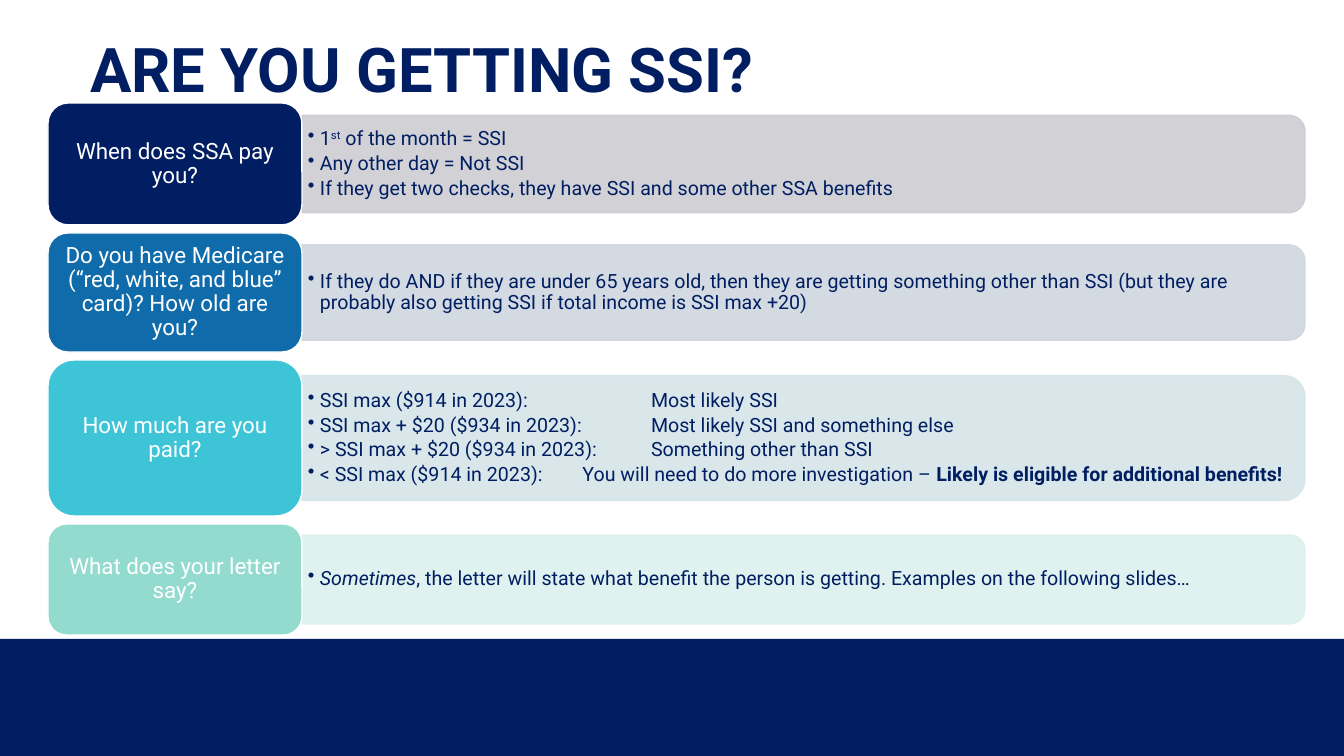
import pptx
import pptx.dml.color
import pptx.enum.shapes
import pptx.enum.text
import pptx.oxml.ns
import pptx.util
from lxml import etree

PX = 914400 / 100.8
FONT = "Roboto"
NAVY = "001E61"
WHITE = "FFFFFF"
SHAPE = pptx.enum.shapes.MSO_SHAPE
MIDDLE = pptx.enum.text.MSO_ANCHOR.MIDDLE
CENTER = pptx.enum.text.PP_ALIGN.CENTER

TAB_LEFT, TAB_WIDTH = 48, 254
PANEL_LEFT, PANEL_WIDTH = 302, 1003
ROWS_TOP, ROW_GAP = 103, 8
PANEL_SHARE = 0.8

ROWS = [
    (122, NAVY, "CCCDD2", "When does SSA pay you?", [
        [("1", ""), ("st", "super"), (" of the month = SSI", "")],
        [("Any other day = Not SSI", "")],
        [("If they get two checks, they have SSI and some other SSA benefits", "")],
    ]),
    (119, "106BAA", "D0D6DF",
     "Do you have Medicare (“red, white, and blue” card)? How old are you?", [
        [("If they do AND if they are under 65 years old, then they are getting "
          "something other than SSI (but they are probably also getting SSI if "
          "total income is SSI max +20)", "")],
     ]),
    (156, "3DC4D7", "D5E5E9", "How much are you paid?", [
        [("SSI max ($914 in 2023): \t\tMost likely SSI", "")],
        [("SSI max + $20 ($934 in 2023): \tMost likely SSI and something else", "")],
        [("> SSI max + $20 ($934 in 2023): \tSomething other than SSI", "")],
        [("< SSI max ($914 in 2023): \tYou will need to do more investigation – ", ""),
         ("Likely is eligible for additional benefits!", "bold")],
    ]),
    (111, "93DACF", "DDF1EE", "What does your letter say?", [
        [("Sometimes", "italic"),
         (", the letter will state what benefit the person is getting. "
          "Examples on the following slides…", "")],
    ]),
]


def px(length):
    return pptx.util.Emu(round(length * PX))


def color(value):
    return pptx.dml.color.RGBColor.from_string(value)


def set_font(font, size, value):
    font.name = FONT
    font.size = pptx.util.Pt(size)
    font.color.rgb = color(value)


def set_frame(frame, side, edge):
    frame.word_wrap = True
    frame.vertical_anchor = MIDDLE
    frame.margin_left = frame.margin_right = px(side)
    frame.margin_top = frame.margin_bottom = px(edge)


def add_box(page, left, top, width, height):
    return page.shapes.add_textbox(px(left), px(top), px(width), px(height))


def add_block(page, kind, left, top, width, height, fill, line=None):
    block = page.shapes.add_shape(kind, px(left), px(top), px(width), px(height))
    block.shadow.inherit = False
    block.fill.solid()
    block.fill.fore_color.rgb = color(fill)
    if line:
        block.line.color.rgb = color(line)
        block.line.width = pptx.util.Pt(1)
    else:
        block.line.fill.background()
    return block


def add_title(page, text):
    box = add_box(page, 80, 0, 1159, 146)
    set_frame(box.text_frame, 10, 5)
    box.text_frame.text = text
    para = box.text_frame.paragraphs[0]
    para.line_spacing = 0.9
    span = para.runs[0]
    set_font(span.font, 44, NAVY)
    span.font.bold = True


def add_panel(page, middle, height, fill):
    left = PANEL_LEFT + (PANEL_WIDTH - height) / 2
    panel = add_block(page, SHAPE.ROUND_2_SAME_RECTANGLE, left,
                      middle - PANEL_WIDTH / 2, height, PANEL_WIDTH, fill, fill)
    panel.rotation = 90
    for tint in panel._element.spPr.iter(pptx.oxml.ns.qn("a:srgbClr")):
        etree.SubElement(tint, pptx.oxml.ns.qn("a:alpha"), val="90000")


def set_bullet(para):
    properties = para._p.get_or_add_pPr()
    properties.set("marL", str(px(12)))
    properties.set("indent", str(-px(12)))
    properties.set("defTabSz", "622300")
    etree.SubElement(properties, pptx.oxml.ns.qn("a:buChar"), char="•")


def add_answers(page, middle, height, answers):
    box = add_box(page, PANEL_LEFT, middle - height / 2, 998, height)
    frame = box.text_frame
    set_frame(frame, 6, 3)
    for number, answer in enumerate(answers):
        para = frame.add_paragraph() if number else frame.paragraphs[0]
        set_bullet(para)
        para.line_spacing = 0.9
        para.space_after = pptx.util.Pt(2.5)
        for text, style in answer:
            span = para.add_run()
            span.text = text
            set_font(span.font, 14, NAVY)
            if style == "bold":
                span.font.bold = True
            elif style == "italic":
                span.font.italic = True
            elif style == "super":
                span.font._element.set("baseline", "30000")


def add_question(page, top, height, fill, text):
    tab = add_block(page, SHAPE.ROUNDED_RECTANGLE, TAB_LEFT, top,
                    TAB_WIDTH, height, fill, WHITE)
    set_frame(tab.text_frame, 7, 3)
    tab.text_frame.text = text
    para = tab.text_frame.paragraphs[0]
    para.alignment = CENTER
    para.line_spacing = 0.9
    set_font(para.runs[0].font, 16, WHITE)


def main():
    deck = pptx.Presentation()
    deck.slide_width, deck.slide_height = px(1344), px(756)
    page = deck.slides.add_slide(deck.slide_layouts[6])
    add_block(page, SHAPE.RECTANGLE, 0, 639, 1344, 117, NAVY)
    add_title(page, "ARE YOU GETTING SSI?")
    top = ROWS_TOP
    for height, tab_fill, panel_fill, question, answers in ROWS:
        middle = top + height / 2
        panel_height = height * PANEL_SHARE
        add_panel(page, middle, panel_height, panel_fill)
        add_answers(page, middle, panel_height, answers)
        add_question(page, top, height, tab_fill, question)
        top += height + ROW_GAP
    deck.save("out.pptx")


if __name__ == "__main__":
    main()
